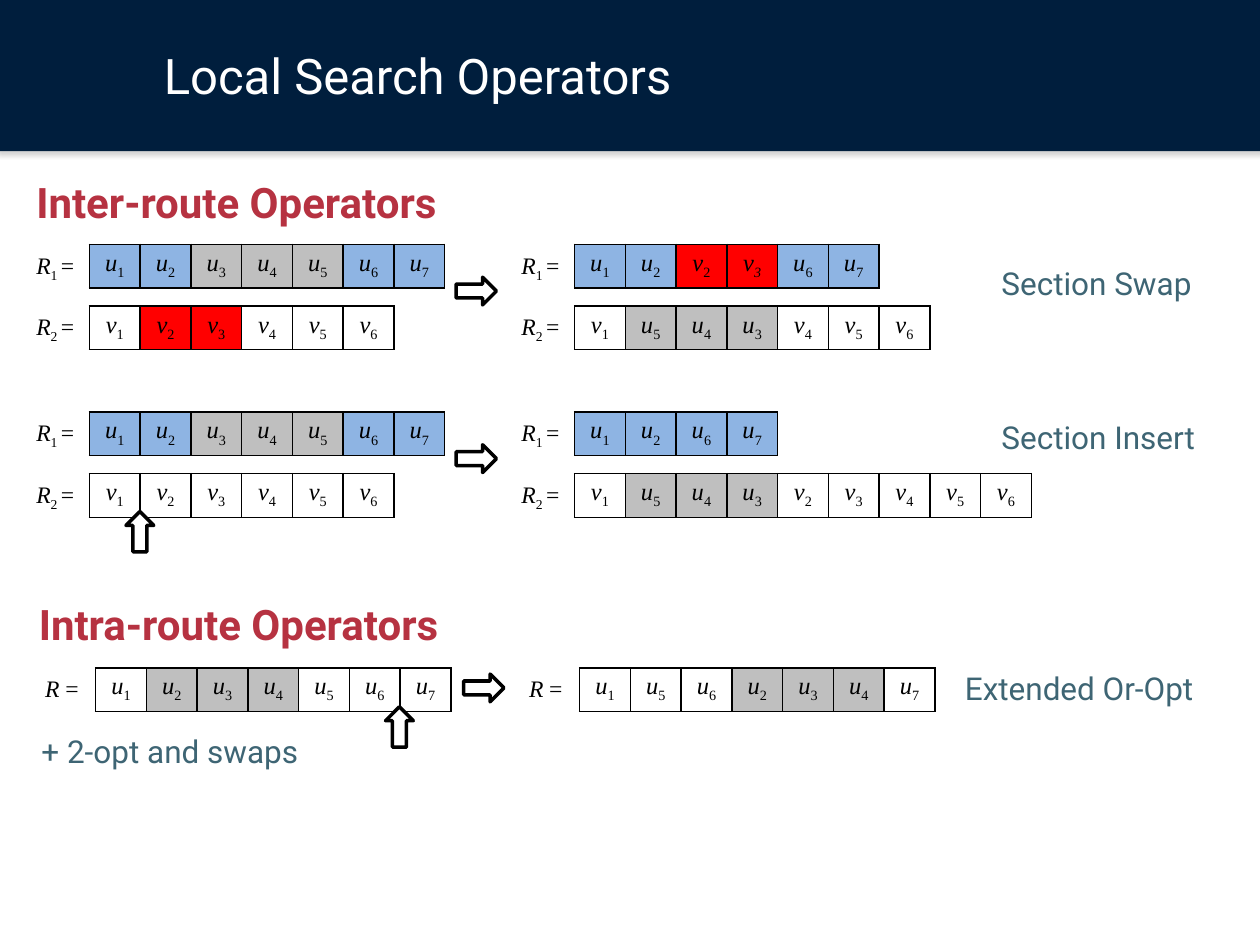
from dataclasses import dataclass

from lxml import etree
from pptx import Presentation
from pptx.dml.color import RGBColor
from pptx.enum.shapes import MSO_SHAPE
from pptx.enum.text import MSO_ANCHOR, MSO_AUTO_SIZE, PP_ALIGN
from pptx.oxml import parse_xml
from pptx.oxml.ns import nsdecls, qn
from pptx.util import Inches, Pt

RECT, ARROW = MSO_SHAPE.RECTANGLE, MSO_SHAPE.RIGHT_ARROW
TOP, GROW = MSO_ANCHOR.TOP, MSO_AUTO_SIZE.SHAPE_TO_FIT_TEXT
LEFT, CENTER = PP_ALIGN.LEFT, PP_ALIGN.CENTER

SANS, SERIF = "Roboto", "Times New Roman"
NAVY, RED, TEAL, BLACK, WHITE = "001E3D", "B63241", "3E6574", "000000", "FFFFFF"
FILLS = {"b": "8EB4E3", "g": "BFBFBF", "r": "FF0000", "w": WHITE}
CELL = 2.82 / 7
HIGH = 0.31
SHADOW = (
    f'<a:effectLst {nsdecls("a")}><a:outerShdw blurRad="39370" dist="22860" dir="5400000" '
    'rotWithShape="0"><a:srgbClr val="808080"><a:alpha val="35000"/></a:srgbClr>'
    "</a:outerShdw></a:effectLst>"
)


@dataclass
class Route:
    """A named row of cells: letter, index, fill key, optional slanted index; "-" is blank."""
    x: float
    y: float
    sub: str
    cells: str


@dataclass
class Arrow:
    """A block arrow, turned by an angle."""
    x: float
    y: float
    turn: int = 0


@dataclass
class Note:
    """A line of sans text in a box."""
    x: float
    y: float
    w: float
    h: float
    text: str
    size: int = 18
    color: str = TEAL
    bold: bool = False


BLUES = "u1b u2b u3g u4g u5g u6b u7b"
ROUTES = [
    Route(0.71, 1.94, "1", BLUES),
    Route(0.71, 2.43, "2", "v1w v2r v3r v4w v5w v6w -"),
    Route(4.56, 1.94, "1", "u1b u2b v2r v3ri u6b u7b"),
    Route(4.56, 2.43, "2", "v1w u5g u4g u3g v4w v5w v6w"),
    Route(0.71, 3.27, "1", BLUES),
    Route(0.71, 3.76, "2", "v1w v2w v3w v4w v5w v6w -"),
    Route(4.56, 3.27, "1", "u1b u2b u6b u7b"),
    Route(4.56, 3.76, "2", "v1w u5g u4g u3g v2w v3w v4w v5w v6w"),
    Route(0.76, 5.3, "", "u1w u2g u3g u4g u5w u6w u7w"),
    Route(4.6, 5.3, "", "u1w u5w u6w u2g u3g u4g u7w"),
]
ARROWS = [
    Arrow(3.62, 2.2), Arrow(3.62, 3.53), Arrow(3.68, 5.35),
    Arrow(0.95, 4.11, 270), Arrow(3.01, 5.66, 270),
]
NOTES = [
    Note(0.19, 1.35, 5.56, 0.5, "Inter-route Operators", 24, RED, True),
    Note(0.21, 4.7, 5.56, 0.5, "Intra-route Operators", 24, RED, True),
    Note(0.23, 5.76, 5.49, 0.4, "+ 2-opt and swaps"),
    Note(7.85, 2.05, 1.77, 0.4, "Section Swap"),
    Note(7.85, 3.27, 1.77, 0.4, "Section Insert"),
    Note(7.56, 5.26, 2.06, 0.4, "Extended Or-Opt"),
]


def paint(target, color: str) -> None:
    """Give a fill or line fill one solid colour."""
    target.solid()
    target.fore_color.rgb = RGBColor.from_string(color)


def write(para, text: str, size: float, face: str, color: str,
          slant: bool = False, low: bool = False, bold: bool = False) -> None:
    """Add one run to a paragraph."""
    run = para.add_run()
    run.text = text
    font = run.font
    font.size, font.name, font.italic, font.bold = Pt(size), face, slant, bold
    paint(font.fill, color)
    if low:
        run._r.get_or_add_rPr().set("baseline", "-25000")


def make_box(slide, x: float, y: float, w: float, h: float, wrap: bool):
    """Add a text box and return its first paragraph."""
    frame = slide.shapes.add_textbox(Inches(x), Inches(y), Inches(w), Inches(h)).text_frame
    frame.word_wrap, frame.auto_size = wrap, GROW
    return frame.paragraphs[0]


def edge(cell, sides: str) -> None:
    """Draw thin black lines on the given sides of a cell and none on the rest."""
    props = cell._tc.get_or_add_tcPr()
    for side in "LRTB":
        line = etree.SubElement(props, qn(f"a:ln{side}"), w="12700")
        if side in sides:
            solid = etree.SubElement(line, qn("a:solidFill"))
            etree.SubElement(solid, qn("a:srgbClr"), val=BLACK)
        else:
            etree.SubElement(line, qn("a:noFill"))


def fill_cell(cell, code: str) -> None:
    """Set the lines, fill and text of one cell."""
    cell.margin_left = cell.margin_right = Inches(0.07)
    cell.margin_top = cell.margin_bottom = Inches(0.04)
    para = cell.text_frame.paragraphs[0]
    if code == "-":
        edge(cell, "L")
        cell.fill.background()
        para.font.size = Pt(14)
        return
    edge(cell, "LRTB")
    paint(cell.fill, FILLS[code[2]])
    para.alignment = CENTER
    write(para, code[0], 14, SERIF, BLACK, slant=True)
    write(para, code[1], 14, SERIF, BLACK, slant=code.endswith("i"), low=True)


def draw_route(slide, route: Route) -> None:
    """Draw a route's table and its name."""
    codes = route.cells.split()
    table = slide.shapes.add_table(1, len(codes), Inches(route.x), Inches(route.y),
                                   Inches(CELL * len(codes)), Inches(HIGH)).table
    table.first_row = table.horz_banding = False
    for cell, code in zip(table.iter_cells(), codes):
        fill_cell(cell, code)
    gap, wide = (0.52, 0.57) if route.sub else (0.5, 0.52)
    para = make_box(slide, route.x - gap, route.y, wide, 0.33, False)
    write(para, "R", 13.5, SERIF, BLACK, slant=True)
    if route.sub:
        write(para, route.sub + " ", 13.5, SERIF, BLACK, low=True)
    write(para, "=" if route.sub else " =", 13.5, SERIF, BLACK)


def draw_arrow(slide, arrow: Arrow) -> None:
    """Draw a white block arrow with a black outline."""
    shape = slide.shapes.add_shape(ARROW, Inches(arrow.x), Inches(arrow.y),
                                   Inches(0.32), Inches(0.22))
    shape.shadow.inherit = False
    shape.rotation = arrow.turn
    paint(shape.fill, WHITE)
    paint(shape.line.fill, BLACK)
    shape.line.width = Pt(2)


def draw_note(slide, note: Note) -> None:
    """Draw a heading or a caption."""
    para = make_box(slide, note.x, note.y, note.w, note.h, True)
    write(para, note.text, note.size, SANS, note.color, bold=note.bold)


def draw_head(slide) -> None:
    """Draw the band and put the title on it."""
    band = slide.shapes.add_shape(RECT, Inches(-0.03), Inches(-0.01), Inches(10.09), Inches(1.21))
    paint(band.fill, NAVY)
    band.line.fill.background()
    band._element.spPr.append(parse_xml(SHADOW))
    slide.shapes._spTree.insert(2, band._element)
    title = slide.shapes.title
    title.left, title.top = Inches(1.2), Inches(0.31)
    title.width, title.height = Inches(8.28), Inches(0.57)
    frame = title.text_frame
    frame.vertical_anchor, frame.word_wrap, frame.auto_size = TOP, True, GROW
    para = frame.paragraphs[0]
    para.alignment = LEFT
    write(para, "Local Search Operators", 28, SANS, WHITE)


def main() -> None:
    """Build and save the slide."""
    deck = Presentation()
    deck.slide_width, deck.slide_height = Inches(10), Inches(7.5)
    slide = deck.slides.add_slide(deck.slide_layouts[5])
    draw_head(slide)
    for draw, items in ((draw_route, ROUTES), (draw_note, NOTES), (draw_arrow, ARROWS)):
        for item in items:
            draw(slide, item)
    deck.save("out.pptx")


if __name__ == "__main__":
    main()
